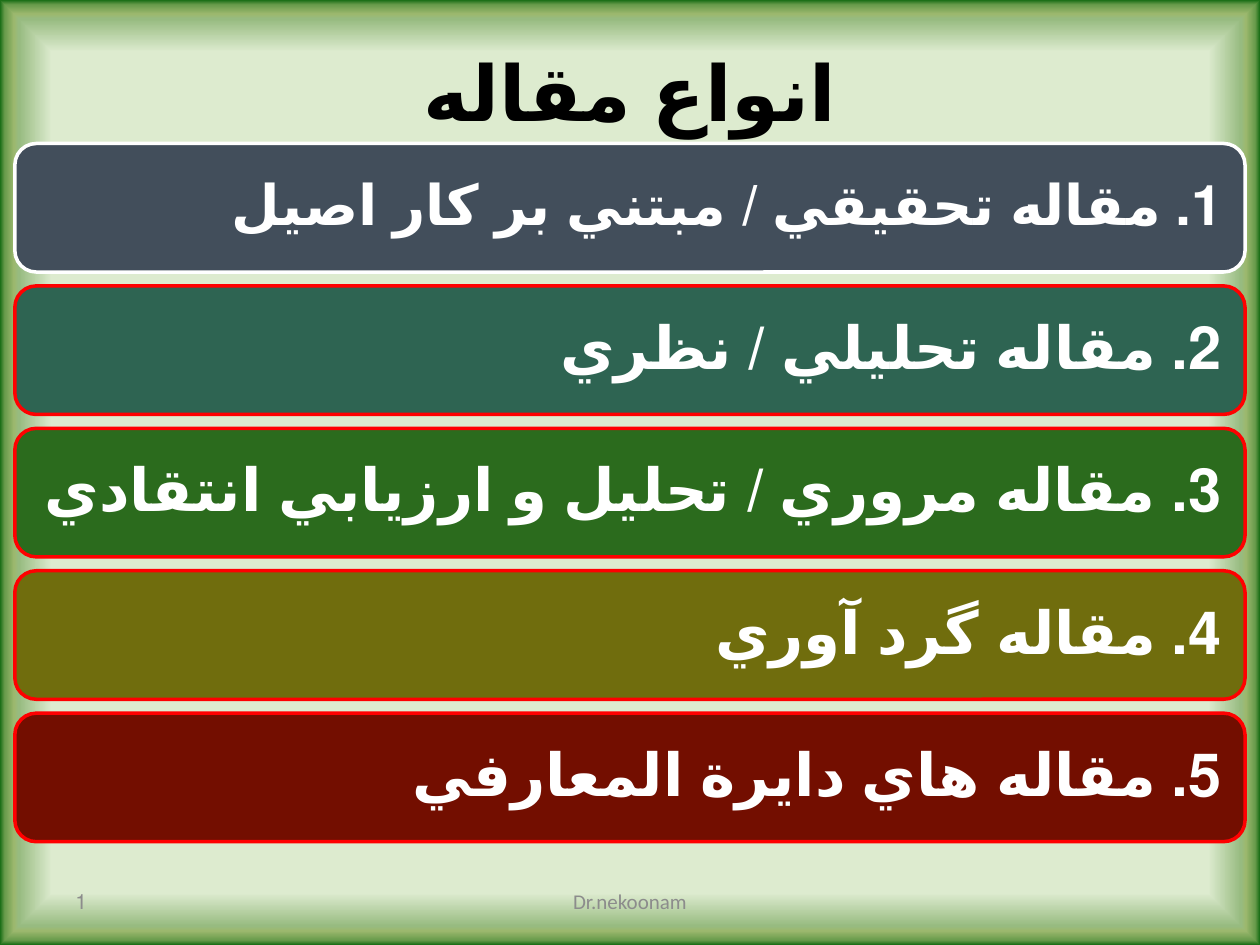
from lxml.etree import SubElement
from pptx import Presentation
from pptx.dml.color import RGBColor
from pptx.enum.lang import MSO_LANGUAGE_ID
from pptx.enum.shapes import MSO_SHAPE
from pptx.enum.text import MSO_ANCHOR, PP_ALIGN
from pptx.oxml.ns import qn
from pptx.util import Pt

BLACK = RGBColor(0x00, 0x00, 0x00)
WHITE = RGBColor(0xFF, 0xFF, 0xFF)
RED = RGBColor(0xFF, 0x00, 0x00)
GREY = RGBColor(0x8C, 0x8C, 0x8C)
SLATE = RGBColor(0x42, 0x4E, 0x5B)
TEAL = RGBColor(0x2E, 0x64, 0x52)
GREEN = RGBColor(0x2B, 0x6B, 0x1D)
OLIVE = RGBColor(0x70, 0x6D, 0x0D)
MAROON = RGBColor(0x73, 0x0E, 0x00)

FRAME_STOPS = [
    (89, RGBColor(0xDD, 0xEB, 0xCF)),
    (96, RGBColor(0x97, 0xBB, 0x80)),
    (97, RGBColor(0x9C, 0xB8, 0x6E)),
    (99, RGBColor(0x68, 0x9B, 0x4B)),
    (100, RGBColor(0x15, 0x6B, 0x13)),
]

ARTICLE_TYPES = [
    (SLATE, WHITE, 32, 9.36, [("1. مقاله تحقيقي / مبتني بر كار اصيل", "Arial")]),
    (TEAL, RED, 34, 10.08, [("2. مقاله تحليلي / نظري", "Arial")]),
    (GREEN, RED, 34, 10.08, [("3. مقاله مروري / تحليل و ارزيابي انتقادي", "Arial")]),
    (OLIVE, RED, 34, 10.08, [("4. مقاله گرد آوري", "Arial")]),
    (MAROON, RED, 34, 10.08,
     [("5. مقاله هاي داير", "Arial"), ("ة", "Calibri"), (" المعارفي", "Arial")]),
]


def paint_background(page):
    fill = page.background.fill
    fill.gradient()
    gradient = page.element.find(".//" + qn("a:gradFill"))
    for child in list(gradient):
        gradient.remove(child)
    stops = SubElement(gradient, qn("a:gsLst"))
    for percent, color in FRAME_STOPS:
        stop = SubElement(stops, qn("a:gs"), pos=str(percent * 1000))
        SubElement(stop, qn("a:srgbClr"), val=str(color))
    shade = SubElement(gradient, qn("a:path"), {"path": "shape"})
    SubElement(shade, qn("a:fillToRect"), l="50000", t="50000", r="50000", b="50000")


def write_line(frame, runs, size, color, align, bold=False, rtl=False):
    frame.word_wrap = True
    frame.vertical_anchor = MSO_ANCHOR.MIDDLE
    para = frame.paragraphs[0]
    para.alignment = align
    if rtl:
        para._p.get_or_add_pPr().set("rtl", "1")
    for text, font_name in runs:
        span = para.add_run()
        span.text = text
        span.font.size = Pt(size)
        span.font.bold = bold
        span.font.color.rgb = color
        span.font.name = font_name
        if rtl:
            span.font.language_id = MSO_LANGUAGE_ID.FARSI
    return para


def add_label(page, box, text, size, color, align, bold=False, rtl=False):
    label = page.shapes.add_textbox(*map(Pt, box))
    write_line(label.text_frame, [(text, "Calibri")], size, color, align, bold, rtl)


def add_article_list(page, box):
    left, top, width, height = box
    gap = 7.92
    count = len(ARTICLE_TYPES)
    bar_height = (height - gap * (count - 1)) / count
    for index, (color, outline, size, inset, runs) in enumerate(ARTICLE_TYPES):
        bar_top = top + index * (bar_height + gap)
        bar = page.shapes.add_shape(
            MSO_SHAPE.ROUNDED_RECTANGLE,
            Pt(left), Pt(bar_top), Pt(width), Pt(bar_height))
        bar.shadow.inherit = False
        bar.fill.solid()
        bar.fill.fore_color.rgb = color
        bar.line.color.rgb = outline
        bar.line.width = Pt(2)
        frame = bar.text_frame
        frame.margin_left = frame.margin_right = Pt(inset)
        frame.margin_top = frame.margin_bottom = Pt(inset)
        para = write_line(frame, runs, size, WHITE, PP_ALIGN.RIGHT, bold=True, rtl=True)
        para.line_spacing = 0.9


def add_footer(page, box):
    left, top, width, height = box
    add_label(page, (left, top, 168, height), "1", 12, GREY, PP_ALIGN.LEFT, rtl=True)
    middle_width = 228
    middle_left = left + (width - middle_width) / 2
    add_label(page, (middle_left, top, middle_width, height),
              "Dr.nekoonam", 12, GREY, PP_ALIGN.CENTER)


def main():
    deck = Presentation()
    deck.slide_width, deck.slide_height = Pt(720), Pt(540)
    page = deck.slides.add_slide(deck.slide_layouts[6])
    paint_background(page)
    add_label(page, (54, 9.36, 612, 85), "انواع مقاله", 44, BLACK,
              PP_ALIGN.CENTER, bold=True, rtl=True)
    add_article_list(page, (8.5, 82, 703, 399))
    add_footer(page, (36, 500.4, 648, 28.8))
    deck.save("out.pptx")


if __name__ == "__main__":
    main()
